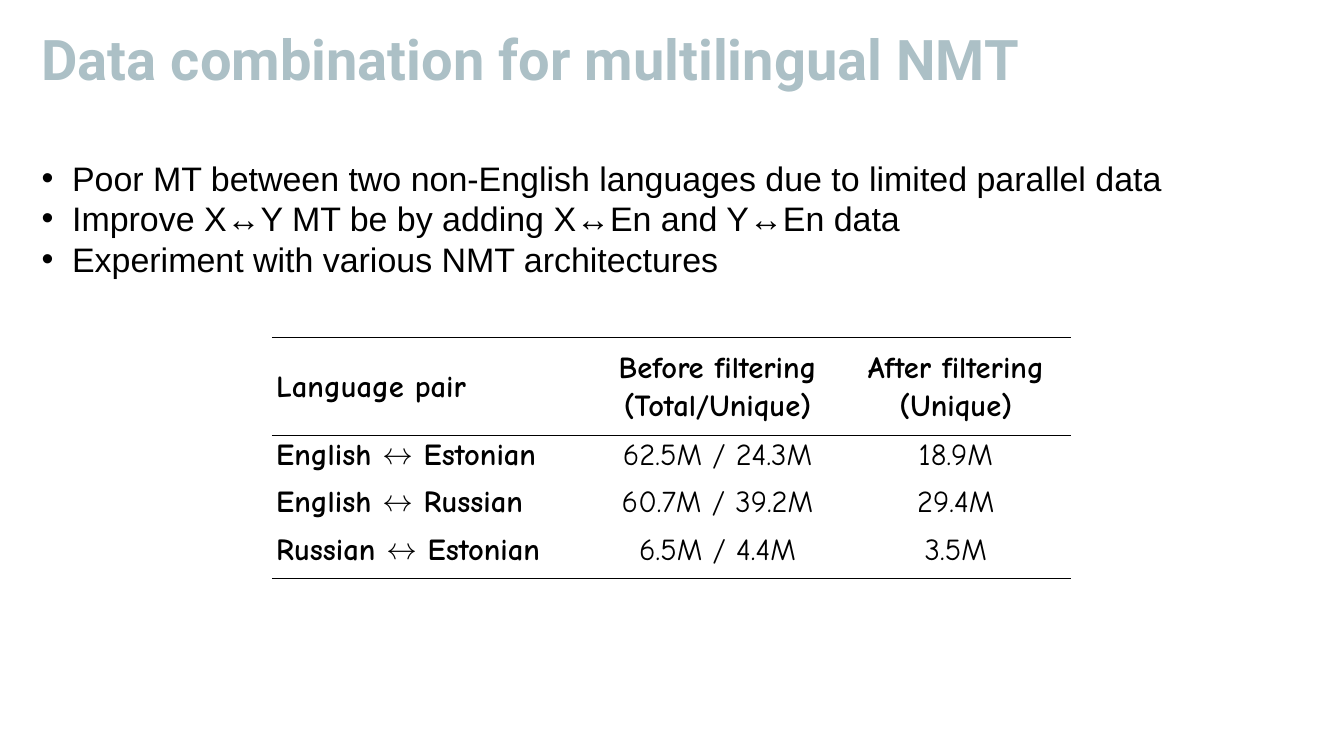
"""Build the slide on data combination for multilingual NMT."""
from lxml.etree import SubElement
from pptx import Presentation
from pptx.dml.color import RGBColor
from pptx.enum.text import MSO_ANCHOR, MSO_AUTO_SIZE, PP_ALIGN
from pptx.oxml import parse_xml
from pptx.oxml.ns import nsdecls, qn
from pptx.util import Inches, Pt


def write(frame, text, size, font, color="000000", bold=False,
          align=PP_ALIGN.LEFT, spacing=1.0, indent=0):
    frame.text = text
    for para in frame.paragraphs:
        properties = para._p.get_or_add_pPr()
        properties.set("marL", str(Inches(indent)))
        properties.set("indent", str(-Inches(indent)))
        if indent:
            SubElement(properties, qn("a:buChar")).set("char", "•")
        para.alignment = align
        para.line_spacing = spacing
        para.space_before = Pt(0)
        for span in para.runs:
            span.font.size = Pt(size)
            span.font.name = font
            span.font.bold = bold
            span.font.color.rgb = RGBColor.from_string(color)


def add_rule(cell, side, position):
    cell._tc.get_or_add_tcPr().insert(position, parse_xml(
        f'<a:{side} {nsdecls("a")} w="{Pt(1)}"><a:solidFill>'
        f'<a:srgbClr val="000000"/></a:solidFill></a:{side}>'))


deck = Presentation()
deck.slide_width = Inches(21.99)
deck.slide_height = Inches(12.37)
page = deck.slides.add_slide(deck.slide_layouts[1])

title, body = page.shapes.title, page.placeholders[1]
for box, top, height in ((title, 0.6, 1.75), (body, 2.52, 9.29)):
    box.left, box.top = Inches(0.58), Inches(top)
    box.width, box.height = Inches(20.83), Inches(height)
    box.text_frame.vertical_anchor = MSO_ANCHOR.TOP
    box.text_frame.auto_size = MSO_AUTO_SIZE.NONE
    box.text_frame.word_wrap = True

write(title.text_frame, "Data combination for multilingual NMT",
      size=66, font="Roboto", color="ACC0C6", bold=True, spacing=0.76)
points = [
    "Poor MT between two non-English languages due to limited parallel data",
    "Improve X↔Y MT be by adding X↔En and Y↔En data",
    "Experiment with various NMT architectures",
]
write(body.text_frame, "\n".join(points), size=40, font="Arial", indent=0.5)

corpus_rows = [
    ("Language pair", "Before filtering\n(Total/Unique)", "After filtering\n(Unique)"),
    ("English ↔ Estonian", "62.5M / 24.3M", "18.9M"),
    ("English ↔ Russian", "60.7M / 39.2M", "29.4M"),
    ("Russian ↔ Estonian", "6.5M / 4.4M", "3.5M"),
]
table = page.shapes.add_table(
    len(corpus_rows), 3, Inches(4.45), Inches(5.52), Inches(13.08), Inches(3.95)).table
table.first_row = table.horz_banding = False
style = table._tbl.tblPr.find(qn("a:tableStyleId"))
style.text = "{2D5ABB26-0587-4C30-8999-92F81FD0307C}"
for column, width in zip(table.columns, (5.28, 4.02, 3.78)):
    column.width = Inches(width)
for row, height in zip(table.rows, (1.6, 0.78, 0.78, 0.78)):
    row.height = Inches(height)

for row_index, texts in enumerate(corpus_rows):
    is_header = row_index == 0
    for column_index, text in enumerate(texts):
        is_label = column_index == 0
        cell = table.cell(row_index, column_index)
        cell.margin_left = cell.margin_right = Inches(0.07)
        cell.margin_top = cell.margin_bottom = 0
        cell.vertical_anchor = MSO_ANCHOR.MIDDLE if is_header else MSO_ANCHOR.TOP
        cell.fill.background()
        write(cell.text_frame, text, size=36, font="Comic Neue",
              bold=is_header or is_label, spacing=1.07,
              align=PP_ALIGN.LEFT if is_label else PP_ALIGN.CENTER)
        if is_header:
            add_rule(cell, "lnT", 0)
            add_rule(cell, "lnB", 1)
        elif row_index == len(corpus_rows) - 1:
            add_rule(cell, "lnB", 0)

deck.save("out.pptx")
